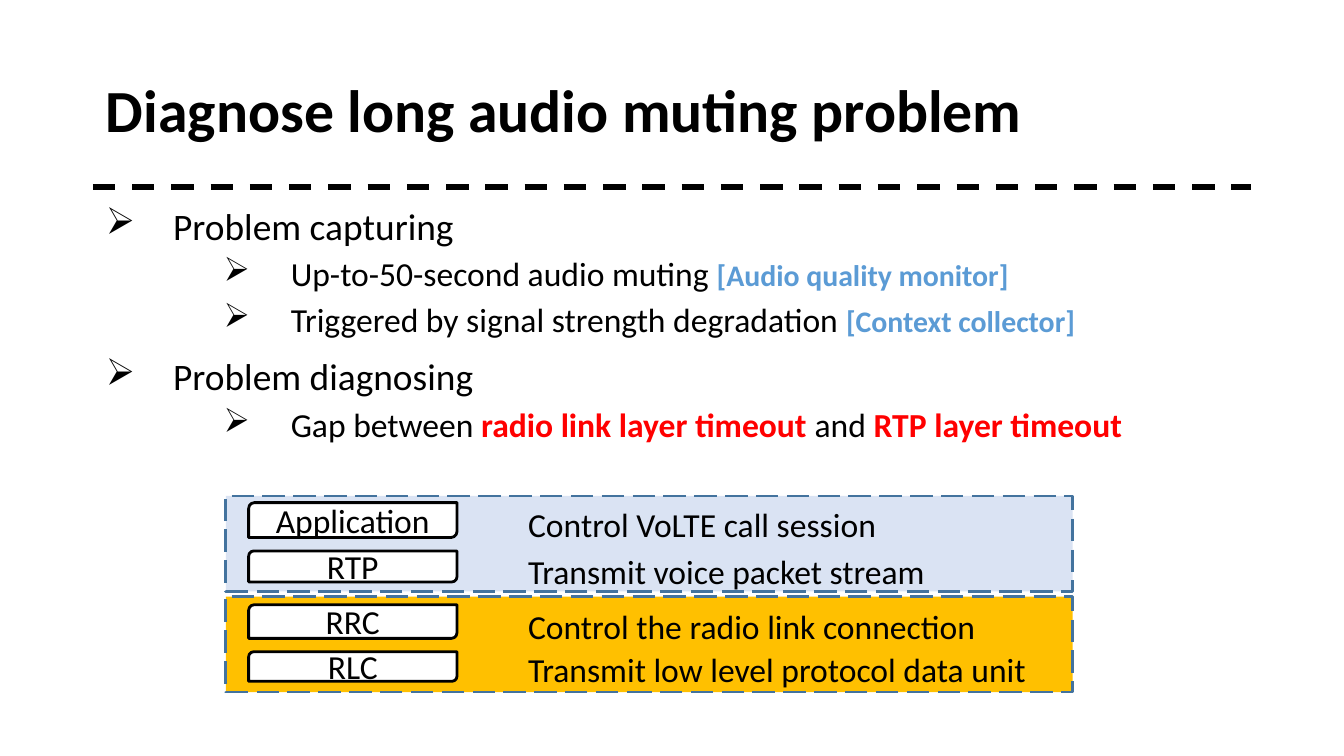
from lxml.etree import SubElement
from pptx import Presentation
from pptx.dml.color import RGBColor
from pptx.enum.dml import MSO_LINE
from pptx.enum.shapes import MSO_CONNECTOR, MSO_SHAPE
from pptx.enum.text import MSO_ANCHOR, MSO_AUTO_SIZE, PP_ALIGN
from pptx.oxml.ns import qn
from pptx.util import Pt

BLACK, WHITE, RED, BLUE = "000000", "FFFFFF", "FF0000", "5B9BD5"
LEFT, WIDTH = 49.7, 620.6

# Each bullet: level, then runs of text, size, colour, bold
BULLETS = [
    (0, [("Problem capturing", 20, BLACK, False)]),
    (1, [("Up-to-50-second audio muting ", 18, BLACK, False),
         ("[Audio quality monitor]", 16, BLUE, True)]),
    (1, [("Triggered by signal strength degradation ", 18, BLACK, False),
         ("[Context collector]", 16, BLUE, True)]),
    (0, [("Problem diagnosing", 20, BLACK, False)]),
    (1, [("Gap between ", 18, BLACK, False),
         ("radio link layer timeout ", 18, RED, True),
         ("and ", 18, BLACK, False),
         ("RTP layer timeout", 18, RED, True)]),
]

# Each band: top, fill, then layers of name, top, height, role, role top, role width
BANDS = [
    (265.7, "DAE3F3", [
        ("Application", 269.3, 18.7, "Control VoLTE call session", 266.4, 203),
        ("RTP", 295.2, 16.6, "Transmit voice packet stream", 291.4, 229),
    ]),
    (319.7, "FFC000", [
        ("RRC", 324, 18, "Control the radio link connection", 320.9, 256.3),
        ("RLC", 349.2, 15.8, "Transmit low level protocol data unit", 344.3, 284.4),
    ]),
]


def colour(value):
    return RGBColor.from_string(value)


def add_span(para, text, size, value=BLACK, bold=False):
    span = para.add_run()
    span.text = text
    span.font.name = "Calibri"
    span.font.size = Pt(size)
    span.font.bold = bold
    span.font.color.rgb = colour(value)


def add_text_box(shapes, left, top, width, height, wrap=True):
    box = shapes.add_textbox(Pt(left), Pt(top), Pt(width), Pt(height))
    box.text_frame.word_wrap = wrap
    return box.text_frame


def add_outlined_shape(shapes, kind, left, top, width, height, fill, line):
    shape = shapes.add_shape(kind, Pt(left), Pt(top), Pt(width), Pt(height))
    shape.shadow.inherit = False
    shape.fill.solid()
    shape.fill.fore_color.rgb = colour(fill)
    shape.line.color.rgb = colour(line)
    shape.line.width = Pt(1.5)
    return shape


def add_title(page, text):
    frame = add_text_box(page.shapes, LEFT, 21.6, WIDTH, 78.5)
    frame.vertical_anchor = MSO_ANCHOR.MIDDLE
    para = frame.paragraphs[0]
    para.line_spacing = 0.9
    add_span(para, text, 32, bold=True)


def add_dashed_rule(page, top):
    rule = page.shapes.add_connector(
        MSO_CONNECTOR.STRAIGHT, Pt(LEFT), Pt(top), Pt(LEFT + WIDTH), Pt(top))
    rule.line.color.rgb = colour(BLACK)
    rule.line.width = Pt(3)
    rule.line.dash_style = MSO_LINE.DASH
    SubElement(rule._element.spPr, qn("a:effectLst"))


def add_bullets(page, bullets):
    frame = add_text_box(page.shapes, LEFT, 108, WIDTH, 257)
    for index, (level, spans) in enumerate(bullets):
        para = frame.add_paragraph() if index else frame.paragraphs[0]
        para.level = level
        para.line_spacing = 0.9
        para.space_before = Pt(5 if level else 10)
        properties = para._p.get_or_add_pPr()
        properties.set("marL", str(Pt(99 if level else 36)))
        properties.set("indent", str(Pt(-36)))
        SubElement(properties, qn("a:buChar"), char="➢")
        for span in spans:
            add_span(para, *span)


def add_band(page, top, fill, layers):
    """Draw one dashed band with its protocol layers and their roles."""
    shapes = page.shapes.add_group_shape().shapes
    band = add_outlined_shape(
        shapes, MSO_SHAPE.RECTANGLE, 121, top, 453.6, 51.1, fill, "43739E")
    band.line.dash_style = MSO_LINE.LONG_DASH
    for name, name_top, height, role, role_top, role_width in layers:
        label = add_outlined_shape(
            shapes, MSO_SHAPE.ROUND_2_DIAG_RECTANGLE,
            133.2, name_top, 111.6, height, WHITE, BLACK)
        label.text_frame.vertical_anchor = MSO_ANCHOR.MIDDLE
        para = label.text_frame.paragraphs[0]
        para.alignment = PP_ALIGN.CENTER
        add_span(para, name, 18)
        frame = add_text_box(shapes, 275.8, role_top, role_width, 29, wrap=False)
        frame.auto_size = MSO_AUTO_SIZE.SHAPE_TO_FIT_TEXT
        add_span(frame.paragraphs[0], role, 18)


def main():
    deck = Presentation()
    deck.slide_width, deck.slide_height = Pt(720), Pt(405)
    page = deck.slides.add_slide(deck.slide_layouts[6])
    add_dashed_rule(page, 100.1)
    add_title(page, "Diagnose long audio muting problem")
    add_bullets(page, BULLETS)
    for band in BANDS:
        add_band(page, *band)
    deck.save("out.pptx")


if __name__ == "__main__":
    main()
